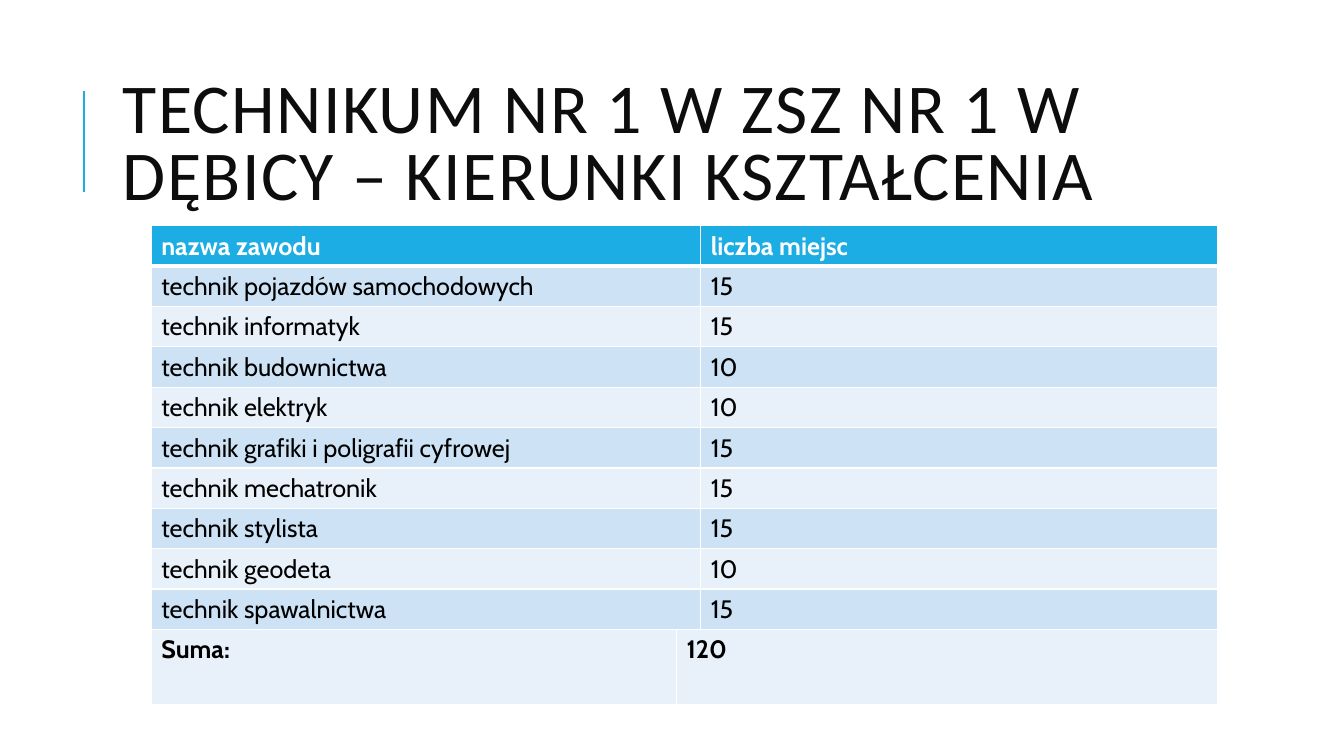
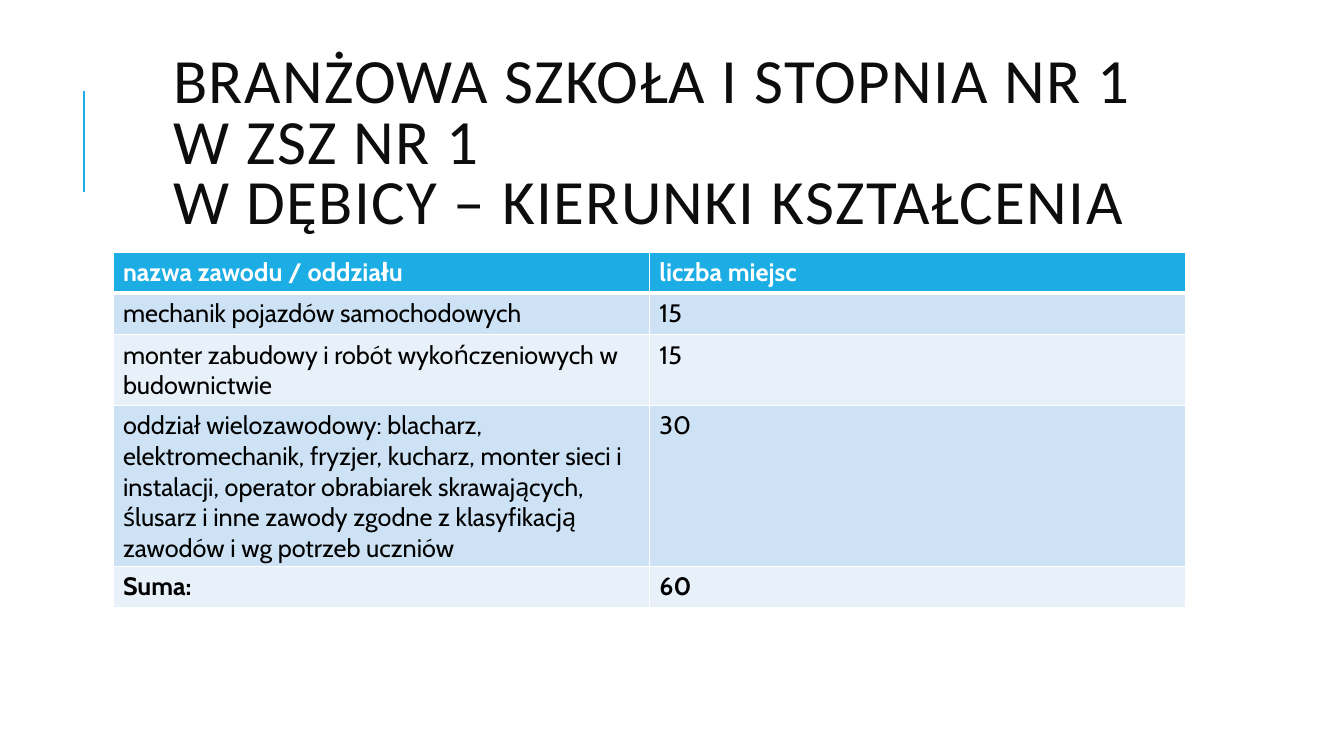
from lxml.etree import SubElement
from pptx import Presentation
from pptx.dml.color import RGBColor
from pptx.enum.shapes import MSO_CONNECTOR as Connector
from pptx.enum.text import MSO_ANCHOR as Anchor
from pptx.oxml import parse_xml
from pptx.oxml.ns import nsdecls, qn
from pptx.util import Inches, Pt

BLUE = RGBColor(0x1C, 0xAD, 0xE4)
INK = RGBColor(0x0D, 0x0D, 0x0D)
BLACK = RGBColor(0, 0, 0)
WHITE = RGBColor(0xFF, 0xFF, 0xFF)
BANDS = RGBColor(0xE8, 0xF1, 0xFA), RGBColor(0xCD, 0xE3, 0xF5)

TECHNICIANS = [
    ("technik pojazdów samochodowych", 15),
    ("technik informatyk", 15),
    ("technik budownictwa", 10),
    ("technik elektryk", 10),
    ("technik grafiki i poligrafii cyfrowej", 15),
    ("technik mechatronik", 15),
    ("technik stylista", 15),
    ("technik geodeta", 10),
    ("technik spawalnictwa", 15),
]
TRADES = [
    ("mechanik pojazdów samochodowych", 15),
    ("monter zabudowy i robót wykończeniowych w budownictwie", 15),
    ("oddział wielozawodowy: blacharz, elektromechanik, fryzjer, kucharz, "
     "monter sieci i instalacji, operator obrabiarek skrawających, ślusarz "
     "i inne zawody zgodne z klasyfikacją zawodów i wg potrzeb uczniów", 30),
]


class SchoolDeck:
    """Builds slides that share one title, accent line and table style."""

    def __init__(self):
        self.deck = Presentation()
        self.deck.slide_width = Inches(13.33)
        self.deck.slide_height = Inches(7.5)
        self.slide = None

    def add_slide(self, title, size, box):
        self.slide = self.deck.slides.add_slide(self.deck.slide_layouts[6])
        self.accent_line()
        self.title(title, size, box)

    def accent_line(self):
        accent = self.slide.shapes.add_connector(
            Connector.STRAIGHT, Inches(0.83), Inches(1.9), Inches(0.83), Inches(0.9))
        accent.line.color.rgb = BLUE
        accent.line.width = Pt(1.5)
        SubElement(accent._element.spPr, qn("a:effectLst"))

    def title(self, text, size, box):
        frame = self.slide.shapes.add_textbox(*map(Inches, box)).text_frame
        frame.word_wrap = True
        frame.vertical_anchor = Anchor.MIDDLE
        heading = frame.paragraphs[0]
        heading.text = text
        heading.line_spacing = 0.8
        for run in heading.runs:
            self.font(run, "Calibri", size, INK)
            run._r.get_or_add_rPr().set("spc", "100")

    def font(self, run, name, size, color, bold=False):
        run.font.name = name
        run.font.size = Pt(size)
        run.font.color.rgb = color
        run.font.bold = bold

    def table(self, rows, left, top, widths, heights):
        table = self.slide.shapes.add_table(
            len(rows), len(widths), Inches(left), Inches(top),
            Inches(sum(widths)), Inches(sum(heights))).table
        for column, width in zip(table.columns, widths):
            column.width = Inches(width)
        for r, (values, height) in enumerate(zip(rows, heights)):
            table.rows[r].height = Inches(height)
            for c, value in enumerate(values):
                self.cell(table.cell(r, c), value, r, r == len(rows) - 1)
            for c in range(1, len(values)):
                if values[c] is None:
                    table.cell(r, c - 1).merge(table.cell(r, c))

    def cell(self, cell, value, row, is_total):
        is_header = row == 0
        cell.fill.solid()
        cell.fill.fore_color.rgb = BLUE if is_header else BANDS[row % 2]
        self.borders(cell, 3 if row == 1 else 1, 3 if is_header else 1)
        if value is not None:
            cell.text_frame.text = str(value)
            self.font(cell.text_frame.paragraphs[0].runs[0], "Cabin", 18,
                      WHITE if is_header else BLACK, is_header or is_total)

    def borders(self, cell, top, bottom):
        properties = cell._tc.get_or_add_tcPr()
        sides = {"lnL": 1, "lnR": 1, "lnT": top, "lnB": bottom}
        for position, (side, width) in enumerate(sides.items()):
            properties.insert(position, parse_xml(
                f'<a:{side} {nsdecls("a")} w="{Pt(width)}"><a:solidFill>'
                f'<a:srgbClr val="{WHITE}"/></a:solidFill></a:{side}>'))


def with_total(header, entries):
    total = sum(seats for _, seats in entries)
    return [(header, "liczba miejsc"), *entries, ("Suma:", total)]


def main():
    school = SchoolDeck()

    school.add_slide("TECHNIKUM NR 1 W ZSZ NR 1 W DĘBICY – KIERUNKI KSZTAŁCENIA",
                     50, (1.12, 0.64, 10.63, 1.64))
    *body, (label, total) = with_total("nazwa zawodu", TECHNICIANS)
    rows = [(name, None, seats) for name, seats in body] + [(label, total, None)]
    school.table(rows, 1.5, 2.24, (5.21, 0.24, 5.13), [0.38] * len(body) + [0.75])

    school.add_slide("BRANŻOWA SZKOŁA I STOPNIA NR 1 W ZSZ NR 1\n"
                     "W DĘBICY – KIERUNKI KSZTAŁCENIA",
                     45, (1.62, 0.75, 10.38, 1.4))
    rows = with_total("nazwa zawodu / oddziału", TRADES)
    school.table(rows, 1.12, 2.5, (5.32, 5.32), [0.41] * len(rows))

    school.deck.save("out.pptx")


if __name__ == "__main__":
    main()
